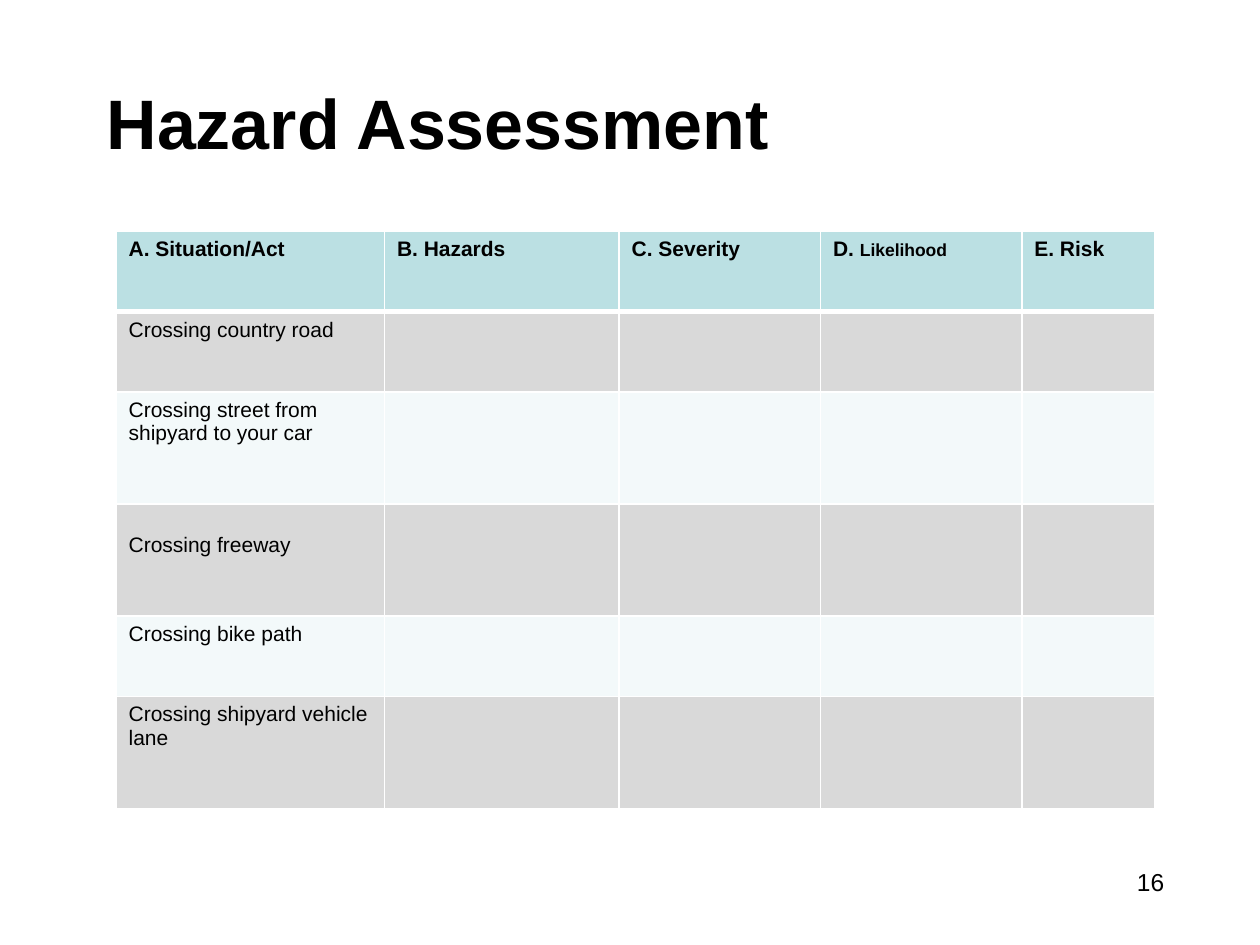
from lxml import etree
from pptx import Presentation
from pptx.dml.color import RGBColor
from pptx.enum.text import MSO_ANCHOR, PP_ALIGN
from pptx.oxml.ns import qn
from pptx.util import Cm, Pt

MIDDLE, TOP = MSO_ANCHOR.MIDDLE, MSO_ANCHOR.TOP
LEFT, RIGHT = PP_ALIGN.LEFT, PP_ALIGN.RIGHT
BLANK_LAYOUT = 6

COLORS = {
    "text": "000000",
    "border": "FFFFFF",
    "header": "BBE0E3",
    "odd_row": "D9D9D9",
    "even_row": "F3F9FA",
}
TITLE = {"name": "Arial", "size": Pt(40), "bold": True}
HEADER = {"name": "Arial", "size": Pt(12), "bold": True}
HEADER_SMALL = {**HEADER, "size": Pt(10)}
BODY = {"name": "Arial", "size": Pt(12), "bold": False}
PAGE_NUMBER = {"name": "Arial", "size": Pt(14), "bold": False}

COLUMN_WIDTHS = [5.41, 4.73, 4.06, 4.06, 2.69]
HEADER_HEIGHT = 1.62
HEADINGS = [
    [("A. Situation/Act", HEADER)],
    [("B. Hazards", HEADER)],
    [("C. Severity", HEADER)],
    [("D. ", HEADER), ("Likelihood", HEADER_SMALL)],
    [("E. Risk", HEADER)],
]
# Situation, row height and top margin in cm
SITUATIONS = [
    ("Crossing country road", 1.62, 0.13),
    ("Crossing street from shipyard to your car", 2.26, 0.13),
    ("Crossing freeway", 2.26, 0.6),
    ("Crossing bike path", 1.62, 0.13),
    ("Crossing shipyard vehicle lane", 2.26, 0.13),
]


def add_spans(para, spans):
    for text, style in spans:
        span = para.add_run()
        span.text = text
        for name, value in style.items():
            setattr(span.font, name, value)
        span.font.color.rgb = RGBColor.from_string(COLORS["text"])


def add_text(page, area, text, style, align=LEFT, anchor=TOP):
    box = page.shapes.add_textbox(*(Cm(length) for length in area))
    box.text_frame.word_wrap = True
    box.text_frame.vertical_anchor = anchor
    para = box.text_frame.paragraphs[0]
    para.alignment = align
    add_spans(para, [(text, style)])


def add_border(cell, side, points):
    properties = cell._tc.get_or_add_tcPr()
    line = etree.SubElement(properties, qn(f"a:ln{side}"), w=str(Pt(points)))
    fill = etree.SubElement(line, qn("a:solidFill"))
    etree.SubElement(fill, qn("a:srgbClr"), val=COLORS["border"])


def format_cell(cell, row):
    thick_sides = {0: "B", 1: "T"}
    for side in "LRTB":
        add_border(cell, side, 3 if thick_sides.get(row) == side else 1)
    band = "header" if row == 0 else "odd_row" if row % 2 else "even_row"
    cell.fill.solid()
    cell.fill.fore_color.rgb = RGBColor.from_string(COLORS[band])


def add_hazard_table(page):
    heights = [HEADER_HEIGHT] + [height for _, height, _ in SITUATIONS]
    table = page.shapes.add_table(
        len(heights), len(COLUMN_WIDTHS), Cm(2.34), Cm(4.66),
        Cm(sum(COLUMN_WIDTHS)), Cm(sum(heights))).table
    table.first_row = table.horz_banding = False
    for column, width in zip(table.columns, COLUMN_WIDTHS):
        column.width = Cm(width)
    for index, (row, height) in enumerate(zip(table.rows, heights)):
        row.height = Cm(height)
        for cell in row.cells:
            format_cell(cell, index)

    # Headings
    for column, spans in enumerate(HEADINGS):
        add_spans(table.cell(0, column).text_frame.paragraphs[0], spans)

    # Situations; the other columns are left open to be filled in
    for row, (situation, _, margin) in enumerate(SITUATIONS, start=1):
        cell = table.cell(row, 0)
        cell.margin_top = Cm(margin)
        add_spans(cell.text_frame.paragraphs[0], [(situation, BODY)])


def main():
    deck = Presentation()
    deck.slide_width, deck.slide_height = Cm(25.4), Cm(19.05)
    page = deck.slides.add_slide(deck.slide_layouts[BLANK_LAYOUT])

    # Title
    add_text(page, (1.9, 0.86, 21.6, 3.18), "Hazard Assessment", TITLE,
             anchor=MIDDLE)
    # Assessment form
    add_hazard_table(page)
    # Page number
    add_text(page, (18.21, 17.35, 5.51, 1.32), "16", PAGE_NUMBER, align=RIGHT)

    deck.save("out.pptx")


if __name__ == "__main__":
    main()
